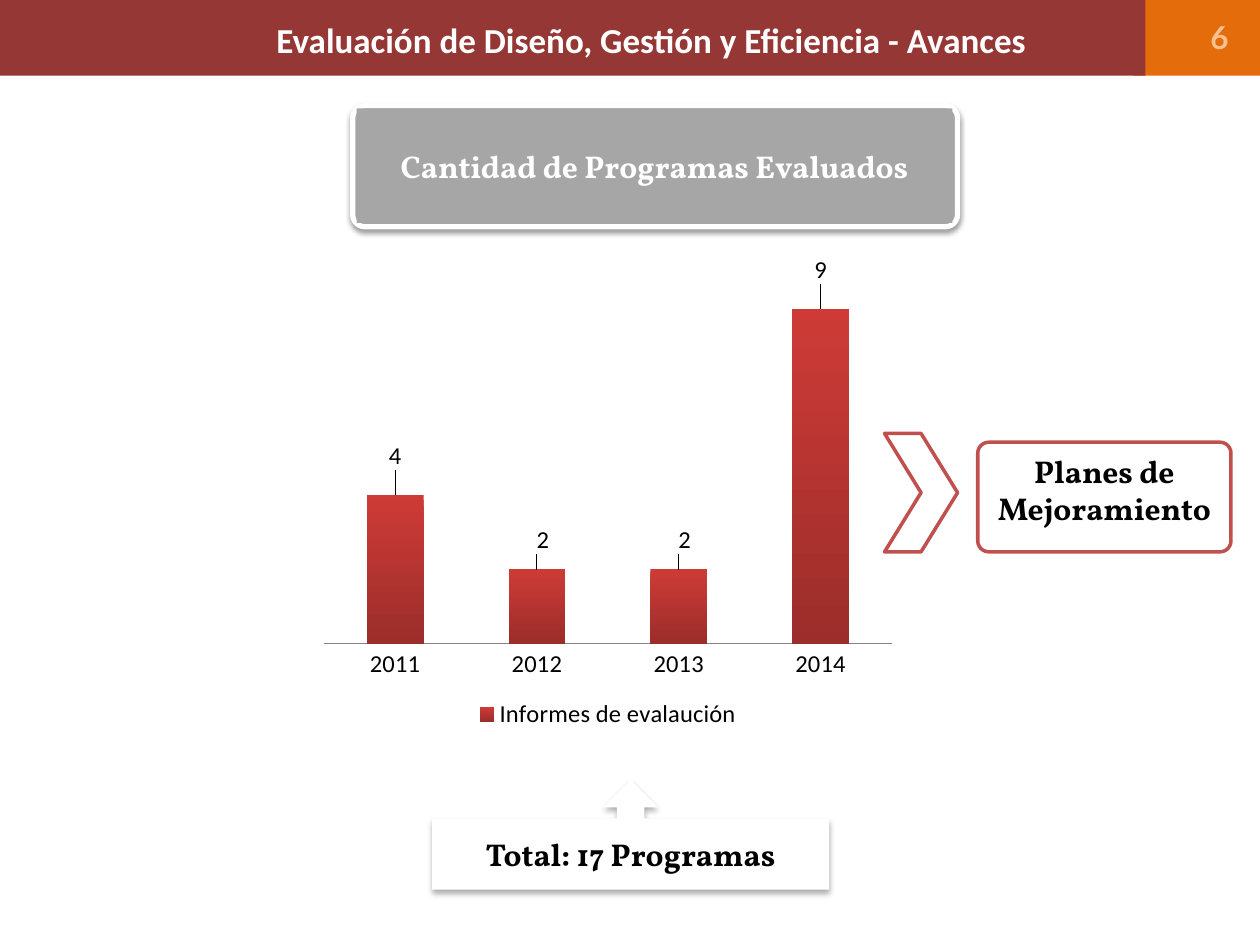
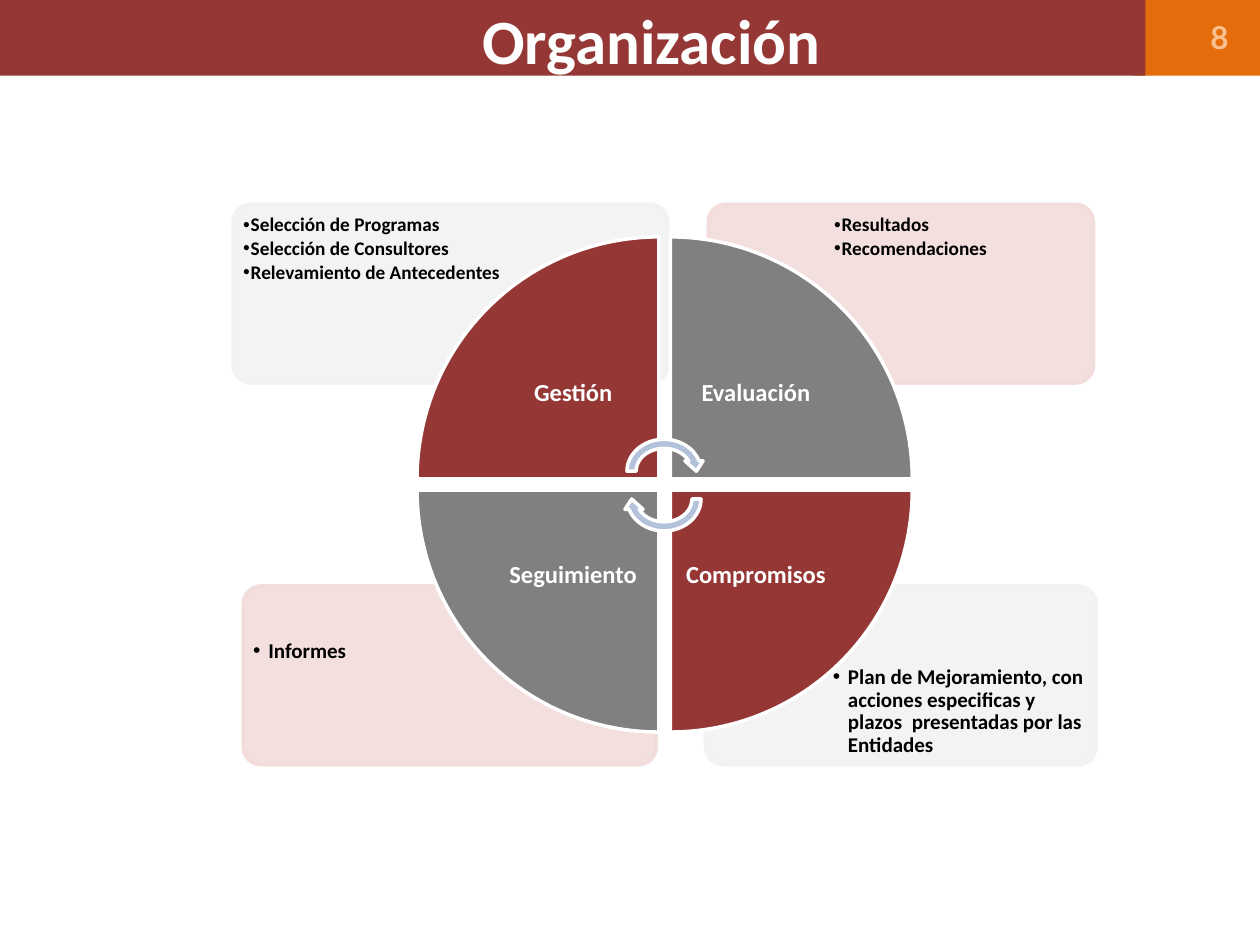
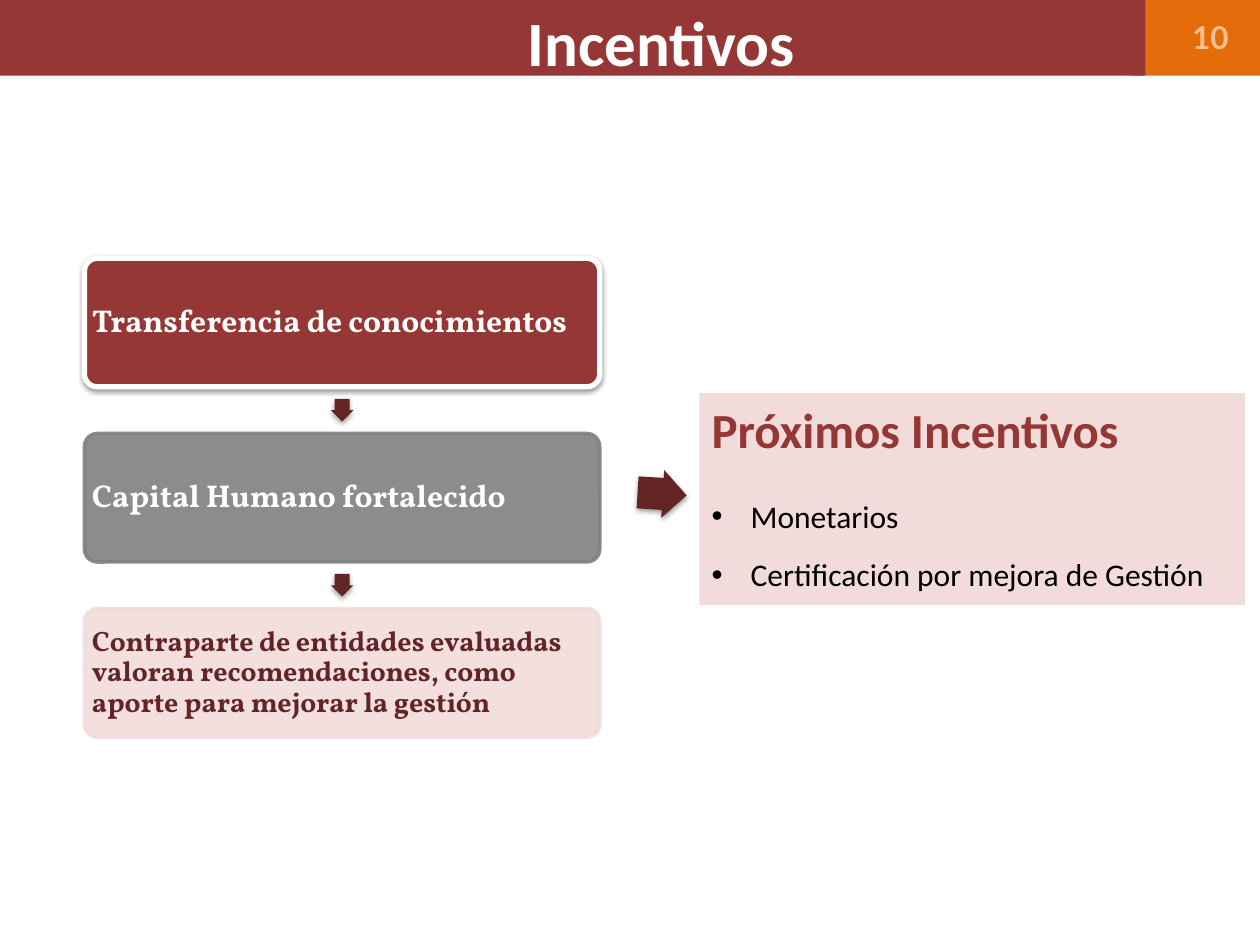
import pptx
import pptx.chart.data
import pptx.dml.color
import pptx.enum.chart
import pptx.enum.shapes
import pptx.enum.text
import pptx.oxml
import pptx.oxml.ns
import pptx.util

Inches = pptx.util.Inches
Pt = pptx.util.Pt
SHAPE = pptx.enum.shapes.MSO_SHAPE
ANCHOR = pptx.enum.text.MSO_ANCHOR
ALIGN = pptx.enum.text.PP_ALIGN

MAROON, DARK, ORANGE, PEACH = "953735", "632523", "E46C0A", "FAC090"
ROSE, MIST, GREY, SILVER = "F2DCDB", "F2F2F2", "808080", "A6A6A6"
RED, BLUE, WHITE, BLACK = "C0504D", "B3C1DB", "FFFFFF", "000000"
SOFT_SHADOW = (38, 3.1, 1.6)
CALLOUT_SHADOW = (32, 3.5, 2.2)
SERIF = {"name": "Vollkorn", "size": 18, "bold": True, "color": BLACK}
SANS = {"name": "Calibri", "size": 18, "bold": True, "color": BLACK}

HEADERS = [
    {"title": "Evaluación de Diseño, Gestión y Eficiencia - Avances",
     "size": 20, "number": "6", "at": (0.67, 0)},
    {"title": "Organización", "size": 36, "number": "8", "at": (0.67, 0)},
    {"title": "Incentivos", "size": 36, "number": "10", "at": (0.75, 0.01)},
]

REPORTS = {
    "name": "Informes de evalaución",
    "years": ["2011", "2012", "2013", "2014"],
    "counts": [4, 2, 2, 9],
    "label_shifts": [(0, -0.04), (0.01, -0.02), (0.01, -0.02), (0, -0.04)],
}

QUADRANTS = [
    {"label": "Compromisos", "column": 1, "row": 1, "turn": 180, "fill": MAROON,
     "card": (5.6, 4.65, 3.1, 1.42), "tint": MIST, "text": (6.56, 5.24, 2.11, 0.79),
     "size": 12, "indent": 0.12,
     "items": ["Plan de Mejoramiento, con acciones especificas y plazos  "
               "presentadas por las Entidades"]},
    {"label": "Seguimiento", "column": 0, "row": 1, "turn": 270, "fill": GREY,
     "card": (1.93, 4.65, 3.28, 1.42), "tint": ROSE, "text": (1.96, 5.03, 2.23, 1),
     "size": 12, "indent": 0.12, "items": ["Informes"]},
    {"label": "Evaluación", "column": 1, "row": 0, "turn": 90, "fill": GREY,
     "card": (5.62, 1.62, 3.06, 1.42), "tint": ROSE, "text": (6.57, 1.66, 2.08, 1),
     "size": 11, "indent": 0.06, "items": ["Resultados", "Recomendaciones"]},
    {"label": "Gestión", "column": 0, "row": 0, "turn": 0, "fill": MAROON,
     "card": (1.85, 1.62, 3.45, 1.42), "tint": MIST, "text": (1.88, 1.66, 2.35, 1),
     "size": 11, "indent": 0.06,
     "items": ["Selección de Programas", "Selección de Consultores",
               "Relevamiento de Antecedentes"]},
]

STEPS = [
    {"text": "Transferencia de conocimientos", "size": 18, "color": WHITE,
     "box": {"fill": MAROON, "line": WHITE, "weight": 3, "shadow": SOFT_SHADOW}},
    {"text": "Capital Humano fortalecido", "size": 18, "color": WHITE,
     "box": {"fill": GREY, "line": GREY, "alpha": 90}},
    {"text": "Contraparte de entidades evaluadas valoran recomendaciones, "
             "como aporte para mejorar la gestión",
     "size": 16, "color": DARK, "box": {"fill": ROSE, "line": ROSE, "alpha": 90}},
]

INCENTIVES = [
    ("Próximos Incentivos", {"size": 28, "color": MAROON}, {}),
    ("Monetarios", {"bold": False}, {"bullet": 0.31, "space_before": 22}),
    ("Certificación por mejora de Gestión", {"bold": False},
     {"bullet": 0.31, "space_before": 12}),
]


def rgb(value):
    return pptx.dml.color.RGBColor.from_string(value)


def xml(text):
    declared = pptx.oxml.ns.nsdecls("a", "c")
    return pptx.oxml.parse_xml(text.replace("NS", declared, 1))


def style_font(font, style):
    for key, value in style.items():
        if key == "color":
            font.color.rgb = rgb(value)
        else:
            setattr(font, key, Pt(value) if key == "size" else value)


def write(shape, paragraphs, inset=None, anchor=ANCHOR.MIDDLE):
    frame = shape.text_frame
    frame.word_wrap = True
    frame.vertical_anchor = anchor
    if inset is not None:
        for side in ("left", "right", "top", "bottom"):
            setattr(frame, f"margin_{side}", Inches(inset))
    for index, (text, style, layout) in enumerate(paragraphs):
        paragraph = frame.paragraphs[0] if index == 0 else frame.add_paragraph()
        paragraph.alignment = layout.get("align", ALIGN.LEFT)
        paragraph.line_spacing = layout.get("line_spacing", 1.0)
        for key in ("space_before", "space_after"):
            if key in layout:
                setattr(paragraph, key, Pt(layout[key]))
        if "bullet" in layout:
            properties = paragraph._p.get_or_add_pPr()
            indent = Inches(layout["bullet"])
            properties.set("marL", str(indent))
            properties.set("indent", str(-indent))
            properties.append(xml('<a:buFont NS typeface="Arial"/>'))
            properties.append(xml('<a:buChar NS char="•"/>'))
        run = paragraph.add_run()
        run.text = text
        style_font(run.font, style)


def add_text(slide, at, paragraphs, **options):
    box = slide.shapes.add_textbox(*map(Inches, at))
    write(box, paragraphs, **options)
    return box


def add_shape(slide, kind, at, fill, line=None, weight=2, alpha=None,
              shadow=None, adjust=(), turn=0):
    shape = slide.shapes.add_shape(kind, *map(Inches, at))
    shape.rotation = turn
    for index, value in enumerate(adjust):
        shape.adjustments[index] = value
    shape.fill.solid()
    shape.fill.fore_color.rgb = rgb(fill)
    if line:
        shape.line.color.rgb = rgb(line)
        shape.line.width = Pt(weight)
    else:
        shape.line.fill.background()
    properties = shape._element.spPr
    if alpha:
        for color in properties.iter(pptx.oxml.ns.qn("a:srgbClr")):
            color.append(xml(f'<a:alpha NS val="{alpha * 1000}"/>'))
    shape.shadow.inherit = False
    if shadow:
        opacity, blur, distance = shadow
        properties.find(pptx.oxml.ns.qn("a:effectLst")).append(xml(
            f'<a:outerShdw NS blurRad="{Pt(blur)}" dist="{Pt(distance)}" '
            'dir="5400000" rotWithShape="0"><a:srgbClr val="000000">'
            f'<a:alpha val="{opacity * 1000}"/></a:srgbClr></a:outerShdw>'))
    return shape


def add_slide(deck, header):
    slide = deck.slides.add_slide(deck.slide_layouts[6])
    add_shape(slide, SHAPE.RECTANGLE, (8.99, 0, 1.01, 0.6), ORANGE)
    add_shape(slide, SHAPE.RECTANGLE, (0, 0, 9.09, 0.6), MAROON)
    number_style = {**SANS, "name": "Lato", "color": PEACH}
    add_text(slide, (9.1, 0.09, 0.75, 0.4),
             [(header["number"], number_style, {"align": ALIGN.RIGHT})])
    title_style = {**SANS, "size": header["size"], "color": WHITE}
    add_text(slide, (*header["at"], 9, 0.63),
             [(header["title"], title_style, {"align": ALIGN.CENTER})])
    return slide


def add_reports_chart(slide):
    data = pptx.chart.data.CategoryChartData()
    data.categories = REPORTS["years"]
    data.add_series(REPORTS["name"], REPORTS["counts"])
    chart = slide.shapes.add_chart(
        pptx.enum.chart.XL_CHART_TYPE.COLUMN_CLUSTERED,
        *map(Inches, (2.48, 2.02, 4.69, 3.81)), data).chart
    style_font(chart.font, {**SANS, "size": 14, "bold": False})
    chart.has_title = False
    chart.has_legend = True
    chart.legend.position = pptx.enum.chart.XL_LEGEND_POSITION.BOTTOM
    chart.legend.include_in_layout = False

    counts = chart.value_axis
    counts.minimum_scale, counts.maximum_scale = 0, 10
    counts.has_major_gridlines = False
    counts.visible = False
    years = chart.category_axis
    years.major_tick_mark = pptx.enum.chart.XL_TICK_MARK.NONE
    years.format.line.color.rgb = rgb("868686")

    plot = chart.plots[0]
    plot.gap_width = 150
    plot.vary_by_categories = False
    bars = plot.series[0]
    fill = bars.format.fill
    fill.gradient()
    fill.gradient_angle = 270
    for stop, color in zip(fill.gradient_stops, ("CE3B37", "9B2D2A")):
        stop.color.rgb = rgb(color)
    bars.data_labels.show_value = True
    for index in range(len(REPORTS["counts"])):
        label = bars.points[index].data_label
        label.position = pptx.enum.chart.XL_LABEL_POSITION.OUTSIDE_END
    labels = bars._element.iter(pptx.oxml.ns.qn("c:dLbl"))
    for label, (x, y) in zip(labels, REPORTS["label_shifts"]):
        label.insert(1, xml(
            f'<c:layout NS><c:manualLayout><c:x val="{x}"/><c:y val="{y}"/>'
            '</c:manualLayout></c:layout>'))

    area = chart._chartSpace.chart.plotArea
    for layout in area.findall(pptx.oxml.ns.qn("c:layout")):
        area.remove(layout)
    area.insert(0, xml(
        '<c:layout NS><c:manualLayout><c:layoutTarget val="inner"/>'
        '<c:xMode val="edge"/><c:yMode val="edge"/><c:x val="0.02"/>'
        '<c:y val="0.03"/><c:w val="0.96"/><c:h val="0.78"/>'
        '</c:manualLayout></c:layout>'))


def build_progress(slide):
    centered = {"align": ALIGN.CENTER}
    add_reports_chart(slide)
    add_shape(slide, SHAPE.ROUNDED_RECTANGLE, (2.8, 0.84, 4.8, 0.96), SILVER,
              line=WHITE, weight=3, shadow=SOFT_SHADOW, adjust=[0.1])
    heading = add_shape(slide, SHAPE.RECTANGLE, (2.83, 0.86, 4.73, 0.91), SILVER)
    write(heading, [("Cantidad de Programas Evaluados",
                     {**SERIF, "color": WHITE}, centered)], inset=0.03)
    plans = add_shape(slide, SHAPE.ROUNDED_RECTANGLE, (7.76, 3.51, 2.01, 0.87),
                      WHITE, line=RED, adjust=[0.1])
    write(plans, [("Planes de Mejoramiento", SERIF, centered)], anchor=ANCHOR.TOP)
    add_shape(slide, SHAPE.CHEVRON, (7.02, 3.44, 0.58, 0.94), WHITE, line=RED)
    total = add_shape(slide, SHAPE.UP_ARROW_CALLOUT, (3.43, 6.19, 3.15, 0.87),
                      WHITE, shadow=CALLOUT_SHADOW)
    write(total, [("Total: 17 Programas", SERIF, centered)])


def build_organization(slide):
    left, top, wedge, pitch, label = 3.31, 1.88, 1.92, 2.01, 1.36
    for quadrant in QUADRANTS:
        add_shape(slide, SHAPE.ROUNDED_RECTANGLE, quadrant["card"], quadrant["tint"],
                  line=quadrant["tint"], alpha=90, adjust=[0.1])
        style = {**SANS, "size": quadrant["size"]}
        layout = {"bullet": quadrant["indent"], "line_spacing": 0.9, "space_after": 1.6}
        add_text(slide, quadrant["text"],
                 [(item, style, layout) for item in quadrant["items"]],
                 inset=0.05, anchor=ANCHOR.TOP)
    for quadrant in QUADRANTS:
        x = left + quadrant["column"] * pitch
        y = top + quadrant["row"] * pitch
        add_shape(slide, SHAPE.PIE_WEDGE, (x, y, wedge, wedge), quadrant["fill"],
                  line=WHITE, turn=quadrant["turn"])
        label_x = x + (1 - quadrant["column"]) * (wedge - label)
        label_y = y + (1 - quadrant["row"]) * (wedge - label)
        add_text(slide, (label_x, label_y, label, label),
                 [(quadrant["label"], {**SANS, "size": 14, "color": WHITE},
                   {"align": ALIGN.CENTER, "line_spacing": 0.9})], inset=0.11)
    for y, turn in ((3.45, 0), (3.67, 180)):
        add_shape(slide, SHAPE.CIRCULAR_ARROW, (4.94, y, 0.66, 0.58), BLUE,
                  line=WHITE, turn=turn)


def build_incentives(slide):
    left, top, width, height, pitch, arrow = 0.67, 2.05, 4.09, 1.02, 1.39, 0.18
    arrow_format = {"fill": DARK, "shadow": SOFT_SHADOW, "adjust": [0.67, 0.5]}
    for index, step in enumerate(STEPS):
        y = top + index * pitch
        box = add_shape(slide, SHAPE.ROUNDED_RECTANGLE, (left, y, width, height),
                        adjust=[0.1], **step["box"])
        style = {**SERIF, "size": step["size"], "color": step["color"]}
        write(box, [(step["text"], style, {"line_spacing": 0.9})], inset=0.03)
        if index:
            gap = pitch - height
            add_shape(slide, SHAPE.RIGHT_ARROW,
                      (left + (width - arrow) / 2, y - (gap + arrow) / 2, arrow, arrow),
                      turn=90, **arrow_format)
    upcoming = add_shape(slide, SHAPE.RECTANGLE, (5.55, 3.12, 4.33, 1.68), ROSE)
    write(upcoming, [(text, {**SANS, **style}, layout)
                     for text, style, layout in INCENTIVES], anchor=ANCHOR.TOP)
    add_shape(slide, SHAPE.RIGHT_ARROW, (5.06, 3.73, 0.39, 0.38), turn=3.5,
              **arrow_format)


def main():
    deck = pptx.Presentation()
    deck.slide_width, deck.slide_height = Inches(10), Inches(7.5)
    builders = (build_progress, build_organization, build_incentives)
    for header, build in zip(HEADERS, builders):
        build(add_slide(deck, header))
    deck.save("out.pptx")


if __name__ == "__main__":
    main()
